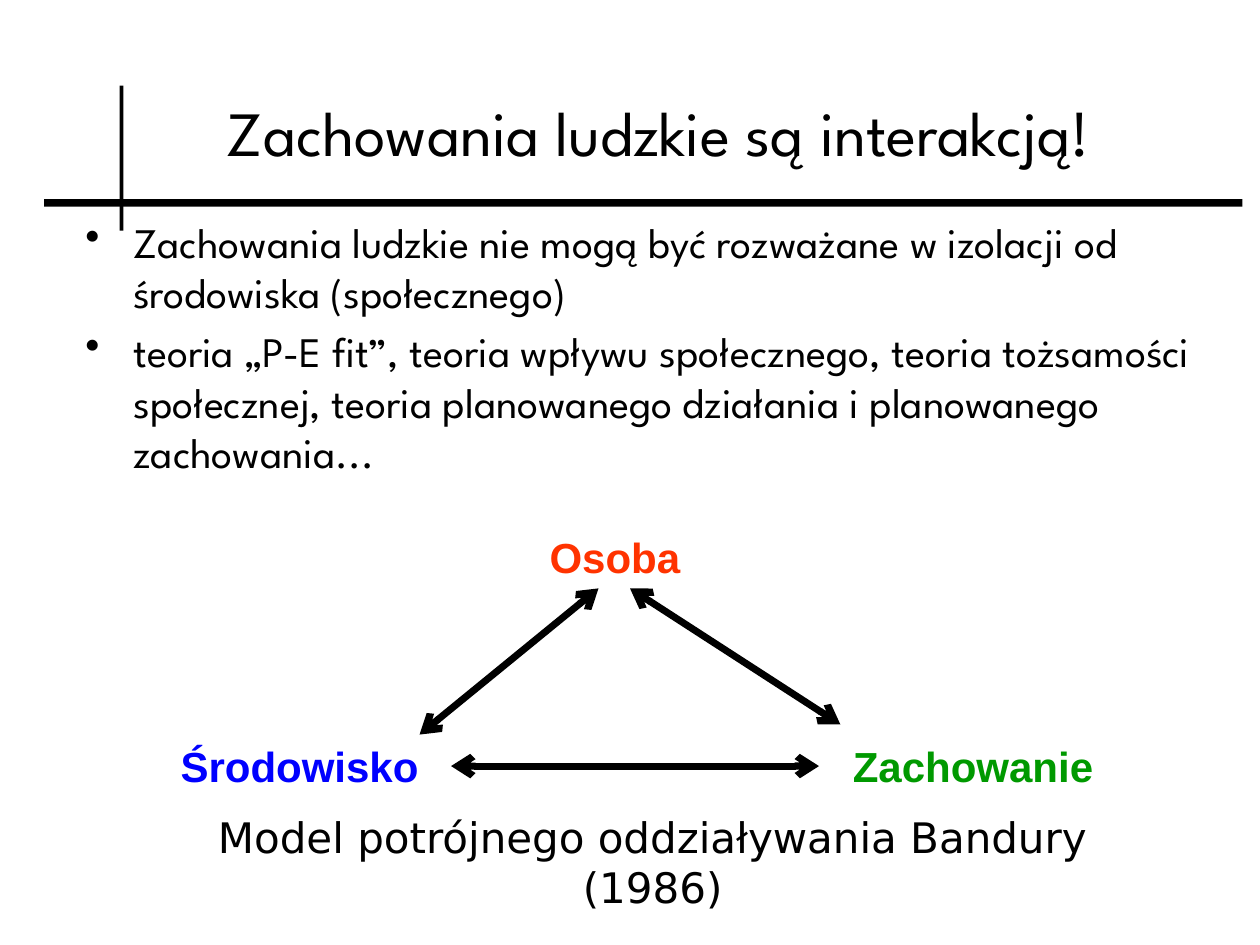
from dataclasses import dataclass

from lxml import etree
from pptx import Presentation
from pptx.dml.color import RGBColor
from pptx.enum.shapes import MSO_CONNECTOR, MSO_SHAPE
from pptx.enum.text import MSO_ANCHOR, PP_ALIGN
from pptx.oxml.ns import qn
from pptx.util import Inches, Pt

LEFT, CENTER, RIGHT = PP_ALIGN.LEFT, PP_ALIGN.CENTER, PP_ALIGN.RIGHT
TOP, MIDDLE = MSO_ANCHOR.TOP, MSO_ANCHOR.MIDDLE
RECTANGLE, STRAIGHT = MSO_SHAPE.RECTANGLE, MSO_CONNECTOR.STRAIGHT


@dataclass(frozen=True)
class Theme:
    black: str = "000000"
    white: str = "FFFFFF"
    person: str = "FF3300"
    environment: str = "0000FF"
    behaviour: str = "009900"
    main_font: str = "League Spartan"
    label_font: str = "Arial"
    caption_font: str = "DejaVu Sans"
    title_size: float = 36
    text_size: float = 24
    bullet_gap: float = 4.8
    arrow_width: float = 4


THEME = Theme()


@dataclass(frozen=True)
class Box:
    left: float
    top: float
    width: float
    height: float

    def emu(self) -> list:
        return [Inches(v) for v in (self.left, self.top, self.width, self.height)]


@dataclass(frozen=True)
class Text:
    box: Box
    paragraphs: tuple
    font: str
    size: float = THEME.text_size
    color: str = THEME.black
    bold: bool = False
    align: PP_ALIGN = CENTER
    anchor: MSO_ANCHOR = TOP
    bullets: bool = False


@dataclass(frozen=True)
class Arrow:
    start: tuple
    end: tuple


def add_bullet(p) -> None:
    p_pr = p._p.get_or_add_pPr()
    p_pr.set("marL", str(Inches(0.38)))
    p_pr.set("indent", str(-Inches(0.38)))
    etree.SubElement(p_pr, qn("a:buChar")).set("char", "•")


def draw_text(slide, text: Text) -> None:
    tf = slide.shapes.add_textbox(*text.box.emu()).text_frame
    tf.word_wrap = True
    tf.vertical_anchor = text.anchor
    for i, words in enumerate(text.paragraphs):
        p = tf.add_paragraph() if i else tf.paragraphs[0]
        p.alignment = text.align
        if i:
            p.space_before = Pt(THEME.bullet_gap)
        if text.bullets:
            add_bullet(p)
        r = p.add_run()
        r.text = words
        r.font.name = text.font
        r.font.size = Pt(text.size)
        r.font.bold = text.bold
        r.font.color.rgb = RGBColor.from_string(text.color)


def draw_bar(slide, box: Box) -> None:
    sp = slide.shapes.add_shape(RECTANGLE, *box.emu())
    sp.shadow.inherit = False
    sp.fill.solid()
    sp.fill.fore_color.rgb = RGBColor.from_string(THEME.black)
    sp.line.fill.background()


def draw_arrow(slide, arrow: Arrow) -> None:
    ends = [Inches(v) for v in arrow.start + arrow.end]
    line = slide.shapes.add_connector(STRAIGHT, *ends)
    line.line.color.rgb = RGBColor.from_string(THEME.black)
    line.line.width = Pt(THEME.arrow_width)
    ln = line.line._get_or_add_ln()
    for tag in ("a:headEnd", "a:tailEnd"):
        etree.SubElement(ln, qn(tag)).set("type", "arrow")
    etree.SubElement(line._element.spPr, qn("a:effectLst"))


# Crossing rules behind the title
BARS = (Box(0.35, 1.58, 9.51, 0.06), Box(0.95, 0.68, 0.03, 1.15))

TITLE = Text(Box(0.75, 0.33, 9.08, 1.43), ("Zachowania ludzkie są interakcją! ",),
             THEME.main_font, THEME.title_size, anchor=MIDDLE)
BODY = Text(
    Box(0.58, 1.67, 9.25, 1.67),
    ("Zachowania ludzkie nie mogą być rozważane w izolacji od środowiska (społecznego)",
     "teoria „P-E fit”, teoria wpływu społecznego, teoria tożsamości społecznej, "
     "teoria planowanego działania i planowanego zachowania..."),
    THEME.main_font, align=LEFT, bullets=True)

# Triangle of mutual influence
LABELS = (
    Text(Box(4.17, 4.17, 1.42, 0.5), ("Osoba",), THEME.label_font,
         color=THEME.person, bold=True),
    Text(Box(1.17, 5.83, 2.25, 0.5), ("Środowisko",), THEME.label_font,
         color=THEME.environment, bold=True, align=RIGHT),
    Text(Box(6.67, 5.83, 2.25, 0.5), ("Zachowanie",), THEME.label_font,
         color=THEME.behaviour, bold=True, align=LEFT),
)
ARROWS = (
    Arrow((4.75, 4.67), (3.33, 5.83)),
    Arrow((5, 4.67), (6.67, 5.75)),
    Arrow((3.58, 6.08), (6.5, 6.08)),
)
CAPTION = Text(Box(1.16, 6.39, 8.04, 0.5),
               ("Model potrójnego oddziaływania Bandury (1986)",), THEME.caption_font)


def main() -> None:
    prs = Presentation()
    prs.slide_width, prs.slide_height = Inches(10), Inches(7.5)
    s = prs.slides.add_slide(prs.slide_layouts[6])
    s.background.fill.solid()
    s.background.fill.fore_color.rgb = RGBColor.from_string(THEME.white)

    for bar in BARS:
        draw_bar(s, bar)
    for text in (TITLE, BODY, *LABELS):
        draw_text(s, text)
    for arrow in ARROWS:
        draw_arrow(s, arrow)
    draw_text(s, CAPTION)
    prs.save("out.pptx")


if __name__ == "__main__":
    main()
